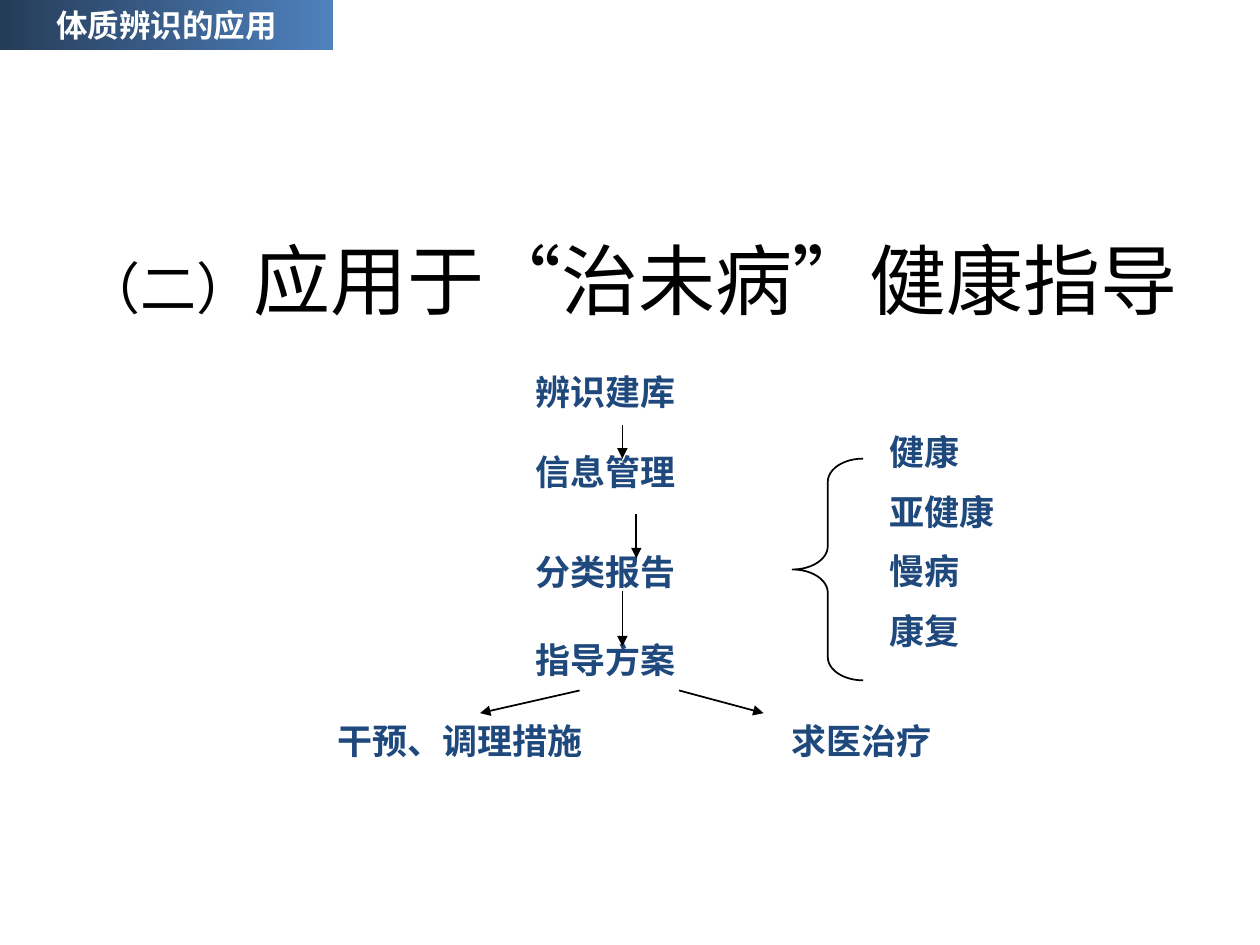
import pptx
import pptx.util
import pptx.dml.color
import pptx.enum.dml
import pptx.enum.lang
import pptx.enum.shapes
import pptx.enum.text
import pptx.oxml
import pptx.oxml.ns
import lxml.etree

Inches = pptx.util.Inches
Pt = pptx.util.Pt
RGBColor = pptx.dml.color.RGBColor
BLACK = RGBColor(0x00, 0x00, 0x00)
WHITE = RGBColor(0xFF, 0xFF, 0xFF)
NAVY = RGBColor(0x1F, 0x49, 0x7D)
HEADER_DARK = RGBColor(0x25, 0x3C, 0x58)
HEADER_LIGHT = RGBColor(0x4F, 0x81, 0xBD)


def style_run(run, size, color, bold, font="Calibri"):
    run.font.name = font
    run.font.size = Pt(size)
    run.font.bold = bold
    run.font.color.rgb = color
    run.font.language_id = pptx.enum.lang.MSO_LANGUAGE_ID.SIMPLIFIED_CHINESE


presentation = pptx.Presentation()
presentation.slide_width = Inches(10)
presentation.slide_height = Inches(7.5)
slide = presentation.slides.add_slide(presentation.slide_layouts[5])

title = slide.shapes.title
title.left, title.top = Inches(0.55), Inches(1.8)
title.width, title.height = Inches(9.06), Inches(0.83)
title.text_frame.auto_size = pptx.enum.text.MSO_AUTO_SIZE.NONE
title.text_frame.vertical_anchor = pptx.enum.text.MSO_ANCHOR.MIDDLE
heading = title.text_frame.paragraphs[0]
heading.alignment = pptx.enum.text.PP_ALIGN.CENTER
for words, size, font in [
    ("（二）", 32, "Calibri"),
    ("应用于", 44, "Calibri"),
    ("“", 44, "Arial"),
    ("治未病", 44, "Calibri"),
    ("”", 44, "Arial"),
    ("健康指导 ", 44, "Calibri"),
]:
    run = heading.add_run()
    run.text = words
    style_run(run, size, BLACK, False, font)

for left, top, width, height, lines in [
    (4.15, 2.89, 2.47, 0.48, ["辨识建库"]),
    (4.15, 3.53, 1.88, 0.48, ["信息管理"]),
    (4.15, 4.32, 1.88, 0.48, ["分类报告"]),
    (4.15, 5.02, 1.88, 0.48, ["指导方案"]),
    (6.96, 3.37, 2.02, 2.16, ["健康", "亚健康", "慢病", "康复"]),
    (2.58, 5.66, 2.42, 0.44, ["干预、调理措施"]),
    (6.18, 5.66, 2.36, 0.44, ["求医治疗"]),
]:
    step = slide.shapes.add_textbox(Inches(left), Inches(top), Inches(width), Inches(height))
    step.text_frame.word_wrap = True
    step.text_frame.text = "\n".join(lines)
    for index, paragraph in enumerate(step.text_frame.paragraphs):
        paragraph.space_before = Pt(10 if index else 0)
        style_run(paragraph.runs[0], 20, NAVY, True)

brace = slide.shapes.add_shape(
    pptx.enum.shapes.MSO_SHAPE.LEFT_BRACE, Inches(6.29), Inches(3.64), Inches(0.56), Inches(1.76)
)
brace.adjustments[0] = 0.33
brace.adjustments[1] = 0.5
brace.shadow.inherit = False
brace.fill.background()
brace.line.color.rgb = BLACK
brace.line.width = Pt(1)

for start_x, start_y, end_x, end_y in [
    (4.94, 3.37, 4.94, 3.64),
    (5.05, 4.08, 5.05, 4.43),
    (4.94, 4.69, 4.94, 5.13),
    (4.6, 5.48, 3.81, 5.66),
    (5.39, 5.48, 6.06, 5.66),
]:
    arrow = slide.shapes.add_connector(
        pptx.enum.shapes.MSO_CONNECTOR.STRAIGHT,
        Inches(start_x), Inches(start_y), Inches(end_x), Inches(end_y),
    )
    arrow.line.color.rgb = BLACK
    arrow.line.width = Pt(1)
    arrowhead = lxml.etree.SubElement(arrow.line._get_or_add_ln(), pptx.oxml.ns.qn("a:tailEnd"))
    arrowhead.set("type", "triangle")
    lxml.etree.SubElement(arrow._element.spPr, pptx.oxml.ns.qn("a:effectLst"))

header = slide.shapes.add_shape(
    pptx.enum.shapes.MSO_SHAPE.RECTANGLE, 0, 0, Inches(2.64), Inches(0.4)
)
header.shadow.inherit = False
header.line.fill.background()
header.fill.gradient()
header.fill.gradient_angle = 0
for stop, color, position in zip(header.fill.gradient_stops, [HEADER_DARK, HEADER_LIGHT], [0, 1]):
    stop.color.rgb = color
    stop.position = position
header.text_frame.text = "体质辨识的应用"
header.text_frame.vertical_anchor = pptx.enum.text.MSO_ANCHOR.MIDDLE
header.text_frame.paragraphs[0].alignment = pptx.enum.text.PP_ALIGN.CENTER
style_run(header.text_frame.paragraphs[0].runs[0], 18, WHITE, True)

presentation.save("out.pptx")
